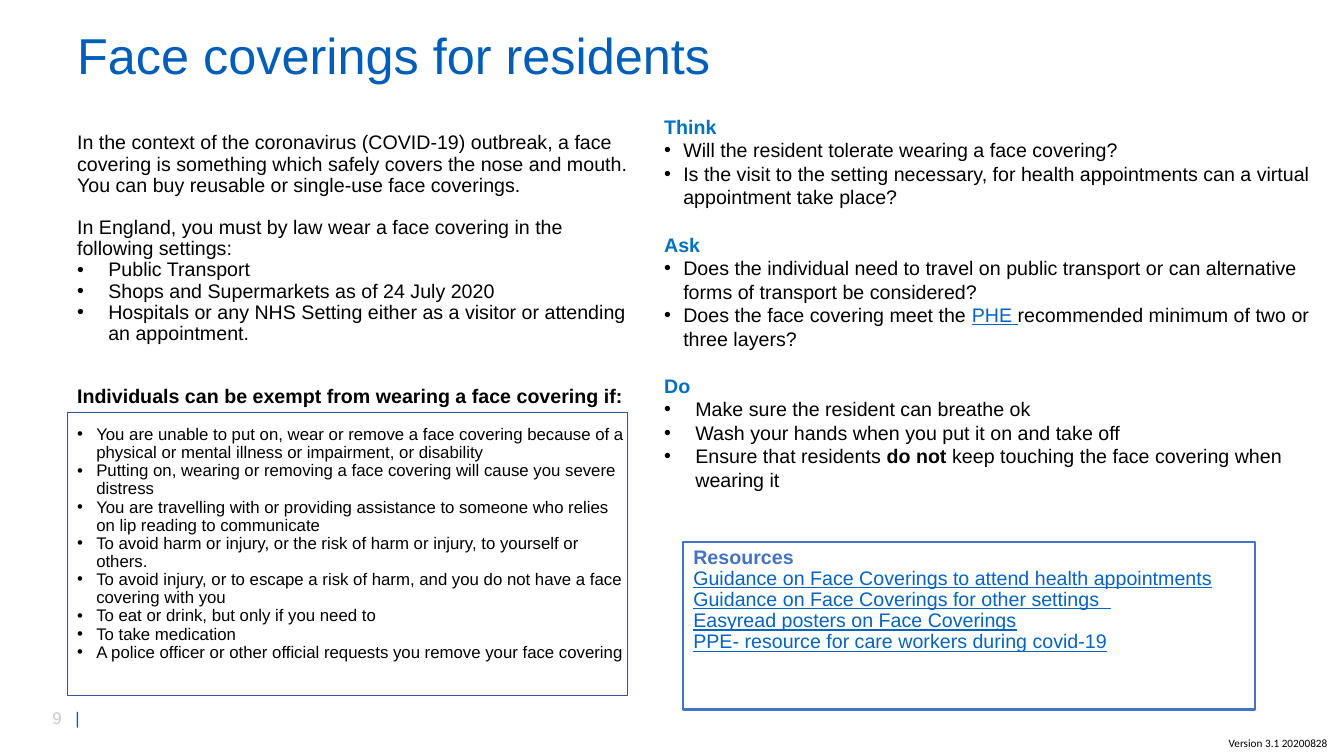
from dataclasses import dataclass

from lxml import etree
from pptx import Presentation
from pptx.dml.color import RGBColor
from pptx.enum.shapes import MSO_SHAPE
from pptx.enum.text import MSO_ANCHOR, PP_ALIGN
from pptx.oxml.ns import qn
from pptx.util import Inches, Pt

RECT = MSO_SHAPE.RECTANGLE
TOP, MIDDLE = MSO_ANCHOR.TOP, MSO_ANCHOR.MIDDLE
LEFT = PP_ALIGN.LEFT

BLACK = RGBColor(0x00, 0x00, 0x00)
GREY = RGBColor(0xC9, 0xC9, 0xC9)
TITLE = RGBColor(0x00, 0x5E, 0xB8)
HEAD = RGBColor(0x00, 0x70, 0xC0)
LINK = RGBColor(0x05, 0x63, 0xC1)
BLUE = RGBColor(0x44, 0x72, 0xC4)
NAVY = RGBColor(0x32, 0x54, 0x91)

WIDTH, HEIGHT = Inches(13.33), Inches(7.5)
NARROW, WIDE = 0.19, 0.31
TIGHT = 0.9


@dataclass
class Run:
    text: str
    color: RGBColor = BLACK
    size: float = 14
    bold: bool = False
    underline: bool = False
    name: str = "Arial"


@dataclass
class Para:
    runs: list[Run]
    indent: float = 0
    before: float = 0
    tab: float = 0


@dataclass
class Area:
    left: float
    top: float
    width: float
    height: float

    def frame(self) -> tuple[int, int, int, int]:
        return (int(WIDTH * self.left / 100), int(HEIGHT * self.top / 100),
                int(WIDTH * self.width / 100), int(HEIGHT * self.height / 100))


@dataclass
class Block:
    area: Area
    paras: list[Para]
    spacing: float = 1.0
    anchor: MSO_ANCHOR = TOP
    wrap: bool = True
    border: RGBColor | None = None
    weight: float = 0


def points(texts: list[str], indent: float, size: float = 14,
           before: float = 0) -> list[Para]:
    return [Para([Run(text, size=size)], indent, 0 if i else before)
            for i, text in enumerate(texts)]


def heading(text: str, before: float = 0) -> Para:
    return Para([Run(text, HEAD, bold=True)], before=before)


def link(text: str) -> Run:
    return Run(text, LINK, underline=True)


def set_all(target: object, values: dict) -> None:
    for key, value in values.items():
        setattr(target, key, value)


def write(para, data: Para, spacing: float) -> None:
    set_all(para, {"alignment": LEFT, "line_spacing": spacing,
                   "space_before": Pt(data.before), "space_after": Pt(0)})
    props = para._p.get_or_add_pPr()
    if data.indent:
        props.set("marL", str(Inches(data.indent)))
        props.set("indent", str(-Inches(data.indent)))
        font = etree.SubElement(props, qn("a:buFont"))
        font.set("typeface", "Arial")
        etree.SubElement(props, qn("a:buChar")).set("char", "•")
    if data.tab:
        stops = etree.SubElement(props, qn("a:tabLst"))
        stop = etree.SubElement(stops, qn("a:tab"))
        stop.set("pos", str(Inches(data.tab)))
        stop.set("algn", "l")
    for item in data.runs:
        run = para.add_run()
        run.text = item.text
        set_all(run.font, {"size": Pt(item.size), "bold": item.bold,
                           "underline": item.underline, "name": item.name})
        run.font.color.rgb = item.color


def draw(slide, block: Block) -> None:
    place = block.area.frame()
    if block.border is None:
        shape = slide.shapes.add_textbox(*place)
    else:
        shape = slide.shapes.add_shape(RECT, *place)
        shape.shadow.inherit = False
        shape.fill.background()
        shape.line.color.rgb = block.border
        shape.line.width = Pt(block.weight)
    frame = shape.text_frame
    set_all(frame, {"word_wrap": block.wrap, "vertical_anchor": block.anchor})
    for i, data in enumerate(block.paras):
        para = frame.add_paragraph() if i else frame.paragraphs[0]
        write(para, data, block.spacing)


RULES = [
    Para([Run("In the context of the coronavirus (COVID-19) outbreak, a face covering is something "
              "which safely covers the nose and mouth. You can buy reusable or single-use face "
              "coverings.")]),
    Para([Run("In England, you must by law wear a face covering in the following settings:")],
         before=15),
    *points(["Public Transport",
             "Shops and Supermarkets as of 24 July 2020",
             "Hospitals or any NHS Setting either as a visitor or attending an appointment."], WIDE),
    Para([Run("Individuals can be exempt from wearing a face covering if:", bold=True)], before=30),
    *points(["You are unable to put on, wear or remove a face covering because of a physical or "
             "mental illness or impairment, or disability",
             "Putting on, wearing or removing a face covering will cause you severe distress",
             "You are travelling with or providing assistance to someone who relies on lip reading "
             "to communicate",
             "To avoid harm or injury, or the risk of harm or injury, to yourself or others.",
             "To avoid injury, or to escape a risk of harm, and you do not have a face covering "
             "with you",
             "To eat or drink, but only if you need to",
             "To take medication",
             "A police officer or other official requests you remove your face covering"],
            NARROW, 12, 13),
]

ADVICE = [
    heading("Think"),
    *points(["Will the resident tolerate wearing a face covering?",
             "Is the visit to the setting necessary, for health appointments can a virtual "
             "appointment take place?"], NARROW),
    heading("Ask", 16.8),
    *points(["Does the individual need to travel on public transport or can alternative forms of "
             "transport be considered?"], NARROW),
    Para([Run("Does the face covering meet the "), link("PHE "),
          Run("recommended minimum of two or three layers?")], NARROW),
    heading("Do", 16.8),
    *points(["Make sure the resident can breathe ok",
             "Wash your hands when you put it on and take off"], WIDE),
    Para([Run("Ensure that residents "), Run("do not ", bold=True),
          Run("keep touching the face covering when wearing it")], WIDE),
]

SOURCES = [
    Para([Run("Resources", BLUE, bold=True)]),
    Para([link("Guidance on Face Coverings to attend health appointments")]),
    Para([link("Guidance on Face Coverings for other settings "),
          Run(" ", LINK, bold=True, underline=True)]),
    Para([link("Easyread posters on Face Coverings")]),
    Para([link("PPE- resource for care workers during covid-19")]),
]

BLOCKS = [
    Block(Area(3.15, 92.93, 7.05, 4),
          [Para([Run("9\t", GREY, 12), Run("|", TITLE, 12)], tab=0.23)]),
    Block(Area(5, 3.2, 82.95, 8.93),
          [Para([Run("Face coverings for residents", TITLE, 36)])], TIGHT, MIDDLE),
    Block(Area(5, 16.93, 42.53, 82), RULES, TIGHT),
    Block(Area(48.68, 14.53, 51.32, 51.6), ADVICE),
    Block(Area(50.85, 71.73, 42.53, 22.13), SOURCES, TIGHT, border=BLUE, weight=1.5),
    Block(Area(90.68, 96.8, 8.93, 3.2),
          [Para([Run("Version 3.1 20200828", size=8, name="Calibri")])], wrap=False),
    Block(Area(5, 54.53, 41.7, 37.47), [], border=NAVY, weight=1),
]


def main() -> None:
    deck = Presentation()
    set_all(deck, {"slide_width": WIDTH, "slide_height": HEIGHT})
    slide = deck.slides.add_slide(deck.slide_layouts[6])
    for block in BLOCKS:
        draw(slide, block)
    deck.save("out.pptx")


if __name__ == "__main__":
    main()
